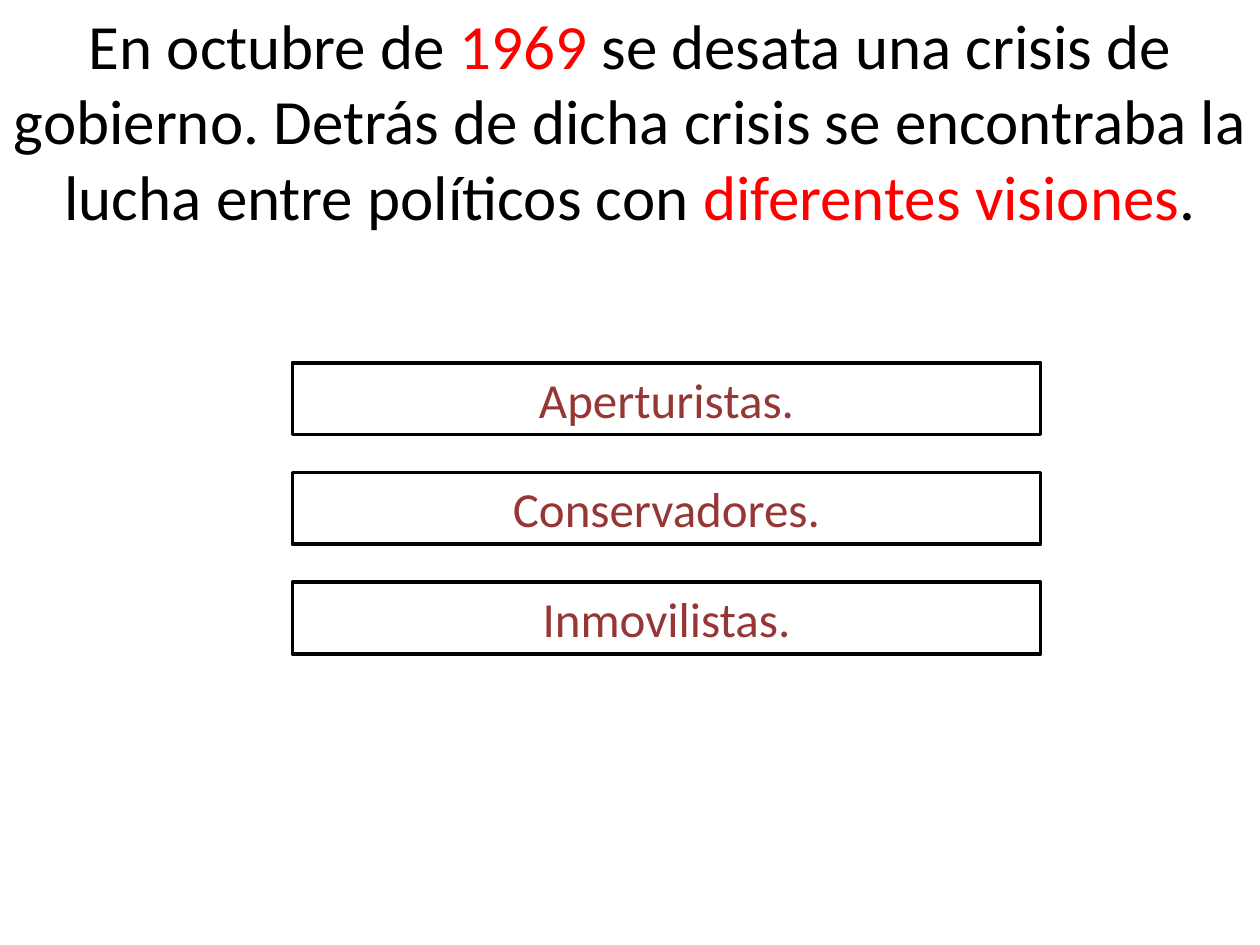
"""Build a slide on the 1969 government crisis and its political factions."""
from pptx import Presentation
from pptx.dml.color import RGBColor
from pptx.enum.shapes import MSO_SHAPE
from pptx.enum.text import MSO_ANCHOR, MSO_AUTO_SIZE, PP_ALIGN
from pptx.util import Inches, Pt

BLACK = RGBColor(0x00, 0x00, 0x00)
WHITE = RGBColor(0xFF, 0xFF, 0xFF)
RED = RGBColor(0xFF, 0x00, 0x00)
MAROON = RGBColor(0x95, 0x37, 0x35)
FONT = "Calibri"

TITLE_RUNS = [
    ("En octubre de ", BLACK),
    ("1969", RED),
    (" se desata una crisis de gobierno. Detrás de dicha crisis "
     "se encontraba la lucha entre políticos con ", BLACK),
    ("diferentes visiones", RED),
    (".", BLACK),
]
FACTIONS = ["Aperturistas.", "Conservadores.", "Inmovilistas."]
BOX_LEFT, BOX_TOP, BOX_WIDTH, BOX_HEIGHT = 2.32, 2.88, 5.94, 0.57
BOX_STEP = 0.87


def write_text(shape, runs, size):
    frame = shape.text_frame
    frame.word_wrap = True
    frame.auto_size = MSO_AUTO_SIZE.SHAPE_TO_FIT_TEXT
    frame.vertical_anchor = MSO_ANCHOR.TOP
    paragraph = frame.paragraphs[0]
    paragraph.alignment = PP_ALIGN.CENTER
    for text, color in runs:
        run = paragraph.add_run()
        run.text = text
        run.font.name = FONT
        run.font.size = Pt(size)
        run.font.color.rgb = color


def add_faction(slide, name, top):
    shape = slide.shapes.add_shape(
        MSO_SHAPE.RECTANGLE, Inches(BOX_LEFT), Inches(top),
        Inches(BOX_WIDTH), Inches(BOX_HEIGHT))
    shape.shadow.inherit = False
    shape.fill.solid()
    shape.fill.fore_color.rgb = WHITE
    shape.line.color.rgb = BLACK
    shape.line.width = Pt(2)
    write_text(shape, [(name, MAROON)], 28)


def main():
    presentation = Presentation()
    presentation.slide_width = Inches(10)
    presentation.slide_height = Inches(7.5)
    slide = presentation.slides.add_slide(presentation.slide_layouts[5])

    title = slide.shapes.title
    title.left, title.top = Inches(0), Inches(0)
    title.width, title.height = Inches(10), Inches(1.92)
    write_text(title, TITLE_RUNS, 36)

    for index, name in enumerate(FACTIONS):
        add_faction(slide, name, BOX_TOP + index * BOX_STEP)

    presentation.save("out.pptx")


if __name__ == "__main__":
    main()
